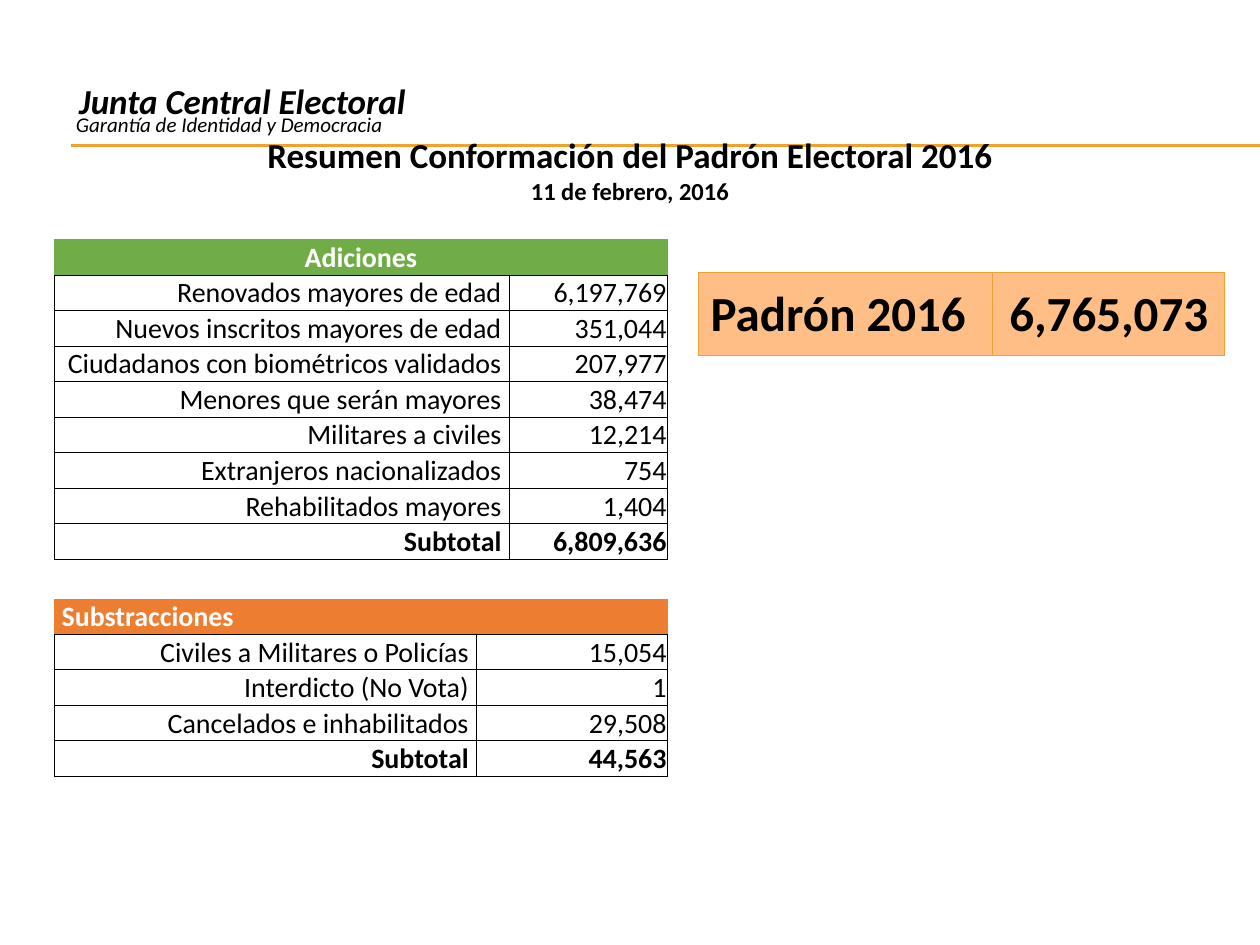
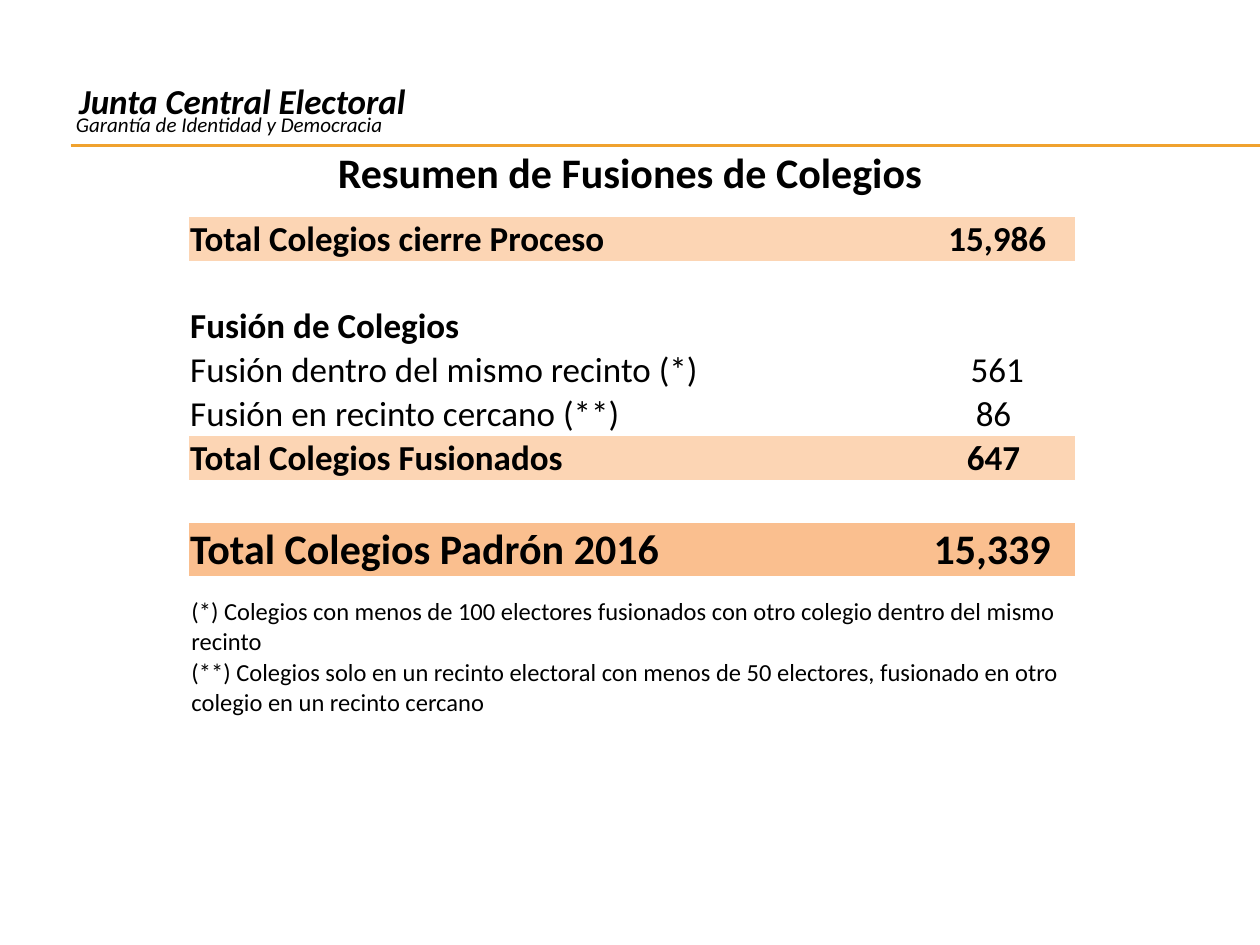
from pptx import Presentation
from pptx.dml.color import RGBColor
from pptx.enum.shapes import MSO_CONNECTOR
from pptx.enum.text import MSO_ANCHOR as ANCHOR, MSO_AUTO_SIZE as AUTO_SIZE, PP_ALIGN as ALIGN
from pptx.oxml import parse_xml
from pptx.oxml.ns import nsdecls, qn
from pptx.util import Inches, Pt

COLORS = {
    "black": "000000",
    "white": "FFFFFF",
    "gold": "F0A22E",
    "green": "70AD47",
    "orange": "ED7D31",
    "apricot": "FFBE85",
    "peach": "FCD5B4",
    "salmon": "FABF8F",
}
FONT = "Calibri"
NO_STYLE = "{2D5ABB26-0587-4C30-8999-92F81FD0307C}"


def write(frame, text, size=16, color="black", bold=False, italic=False, align=ALIGN.LEFT):
    para = frame.paragraphs[0]
    if para.runs:
        para = frame.add_paragraph()
    para.alignment = align
    span = para.add_run()
    span.text = text
    span.font.name = FONT
    span.font.size = Pt(size)
    span.font.bold = bold
    span.font.italic = italic
    span.font.color.rgb = RGBColor.from_string(COLORS[color])


def fill_cell(cell, text, fill=None, border=None, left=0.01, right=0.01, anchor=ANCHOR.BOTTOM, **style):
    cell.margin_left, cell.margin_right = Inches(left), Inches(right)
    cell.vertical_anchor = anchor
    if border:
        properties = cell._tc.get_or_add_tcPr()
        for side in "LRTB":
            properties.append(parse_xml(
                f'<a:ln{side} {nsdecls("a")} w="{Pt(0.5)}"><a:solidFill>'
                f'<a:srgbClr val="{COLORS[border]}"/></a:solidFill></a:ln{side}>'
            ))
    if fill:
        cell.fill.solid()
        cell.fill.fore_color.rgb = RGBColor.from_string(COLORS[fill])
    if text:
        write(cell.text_frame, text, **style)


deck = Presentation()
deck.slide_width, deck.slide_height = Inches(10), Inches(7.5)

titles = [
    (1.01, 0.67, [("Resumen Conformación del Padrón Electoral 2016", 20), ("11 de febrero, 2016", 14)]),
    (1.11, 0.5, [("Resumen de Fusiones de Colegios", 24)]),
]
mottos = [
    ("Junta Central Electoral", 0.53, 0.58, 2.81, 0.44, 20, True, ALIGN.LEFT),
    ("Garantía de Identidad y Democracia", 0.49, 0.84, 2.66, 0.3, 12, False, ALIGN.CENTER),
]
pages = []
for title_top, title_height, title_lines in titles:
    page = deck.slides.add_slide(deck.slide_layouts[5])
    pages.append(page)
    for y in (1.15, 1.16):
        rule = page.shapes.add_connector(
            MSO_CONNECTOR.STRAIGHT, Inches(0.56), Inches(y), Inches(10), Inches(y))
        rule.line.color.rgb = RGBColor.from_string(COLORS["gold"])
        rule.line.width = Pt(0.75)
        rule.element.spPr.append(parse_xml(f'<a:effectLst {nsdecls("a")}/>'))
    for text, left, top, width, height, size, bold, align in mottos:
        box = page.shapes.add_textbox(Inches(left), Inches(top), Inches(width), Inches(height))
        box.text_frame.word_wrap = False
        write(box.text_frame, text, size=size, bold=bold, italic=True, align=align)
    title = page.shapes.title
    title.left, title.top = Inches(0), Inches(title_top)
    title.width, title.height = Inches(10), Inches(title_height)
    title.text_frame.vertical_anchor = ANCHOR.TOP
    title.text_frame.word_wrap = True
    title.text_frame.auto_size = AUTO_SIZE.NONE
    for text, size in title_lines:
        write(title.text_frame, text, size=size, bold=True, align=ALIGN.CENTER)
    title.element.getparent().append(title.element)

summary_page, merger_page = pages
layouts = [
    (summary_page, 5.54, 2.16, [2.34, 1.84], [0.66]),
    (summary_page, 0.43, 1.9, [3.35, 0.26, 1.26], [0.27] * 9 + [0.31] + [0.27] * 5),
    (merger_page, 1.5, 1.72, [5.8, 1.23], [0.34] * 7 + [0.4]),
    (merger_page, 1.51, 4.73, [7.4], [0.47] * 2),
]
tables = []
for page, left, top, widths, heights in layouts:
    frame = page.shapes.add_table(
        len(heights), len(widths), Inches(left), Inches(top), Inches(sum(widths)), Inches(sum(heights)))
    table = frame.table
    table.first_row = table.horz_banding = False
    for style_id in frame.element.iter(qn("a:tableStyleId")):
        style_id.text = NO_STYLE
    for column, width in zip(table.columns, widths):
        column.width = Inches(width)
    for row, height in zip(table.rows, heights):
        row.height = Inches(height)
    for cell in table.iter_cells():
        cell.margin_left = cell.margin_right = cell.margin_top = Inches(0.01)
        cell.margin_bottom = 0
    tables.append(table)

roll_table, change_table, merger_table, note_table = tables

roll_style = dict(fill="apricot", border="gold", anchor=ANCHOR.MIDDLE, size=28, bold=True)
fill_cell(roll_table.cell(0, 0), "Padrón 2016", left=0.1, **roll_style)
fill_cell(roll_table.cell(0, 1), "6,765,073", align=ALIGN.CENTER, **roll_style)

additions = [
    ("Renovados mayores de edad", "6,197,769"),
    ("Nuevos inscritos mayores de edad", "351,044"),
    ("Ciudadanos con biométricos validados", "207,977"),
    ("Menores que serán mayores", "38,474"),
    ("Militares a civiles", "12,214"),
    ("Extranjeros nacionalizados", "754"),
    ("Rehabilitados mayores", "1,404"),
    ("Subtotal", "6,809,636"),
]
subtractions = [
    ("Civiles a Militares o Policías", "15,054"),
    ("Interdicto (No Vota)", "1"),
    ("Cancelados e inhabilitados", "29,508"),
    ("Subtotal", "44,563"),
]
sections = [
    (0, "Adiciones", "green", ALIGN.CENTER, 2, additions),
    (10, "Substracciones", "orange", ALIGN.LEFT, 1, subtractions),
]
change_table.cell(9, 0).merge(change_table.cell(9, 1))
for header_row, heading, color, align, value_column, entries in sections:
    header = change_table.cell(header_row, 0)
    header.merge(change_table.cell(header_row, 2))
    fill_cell(header, heading, fill=color, left=0.06, right=0.06, color="white", bold=True, align=align)
    for row, (label, value) in enumerate(entries, header_row + 1):
        label_cell, value_cell = change_table.cell(row, 0), change_table.cell(row, value_column)
        if value_column == 2:
            label_cell.merge(change_table.cell(row, 1))
        else:
            value_cell.merge(change_table.cell(row, 2))
        entry_style = dict(border="black", bold=label == "Subtotal", align=ALIGN.RIGHT)
        fill_cell(label_cell, label, right=0.06, **entry_style)
        fill_cell(value_cell, value, **entry_style)

mergers = [
    (0, "Total Colegios cierre Proceso", "15,986", "peach", 20, True, 0.01),
    (2, "Fusión de Colegios", "", None, 20, True, 0.01),
    (3, "Fusión dentro del mismo recinto (*)", "561", None, 20, False, 0.01),
    (4, "Fusión en recinto cercano (**)", "86", None, 20, False, 0.07),
    (5, "Total Colegios Fusionados", "647", "peach", 20, True, 0.07),
    (7, "Total Colegios Padrón 2016", "15,339", "salmon", 24, True, 0.09),
]
for row, label, value, fill, size, bold, right in mergers:
    fill_cell(merger_table.cell(row, 0), label, fill=fill, size=size, bold=bold)
    fill_cell(merger_table.cell(row, 1), value, fill=fill, right=right,
              size=size, bold=bold, align=ALIGN.CENTER)

notes = [
    "(*) Colegios con menos de 100 electores fusionados con otro colegio dentro del mismo recinto",
    "(**) Colegios solo en un recinto electoral con menos de 50 electores, "
    "fusionado en otro colegio en un recinto cercano",
]
for row, note in enumerate(notes):
    fill_cell(note_table.cell(row, 0), note, size=14)

deck.save("out.pptx")
